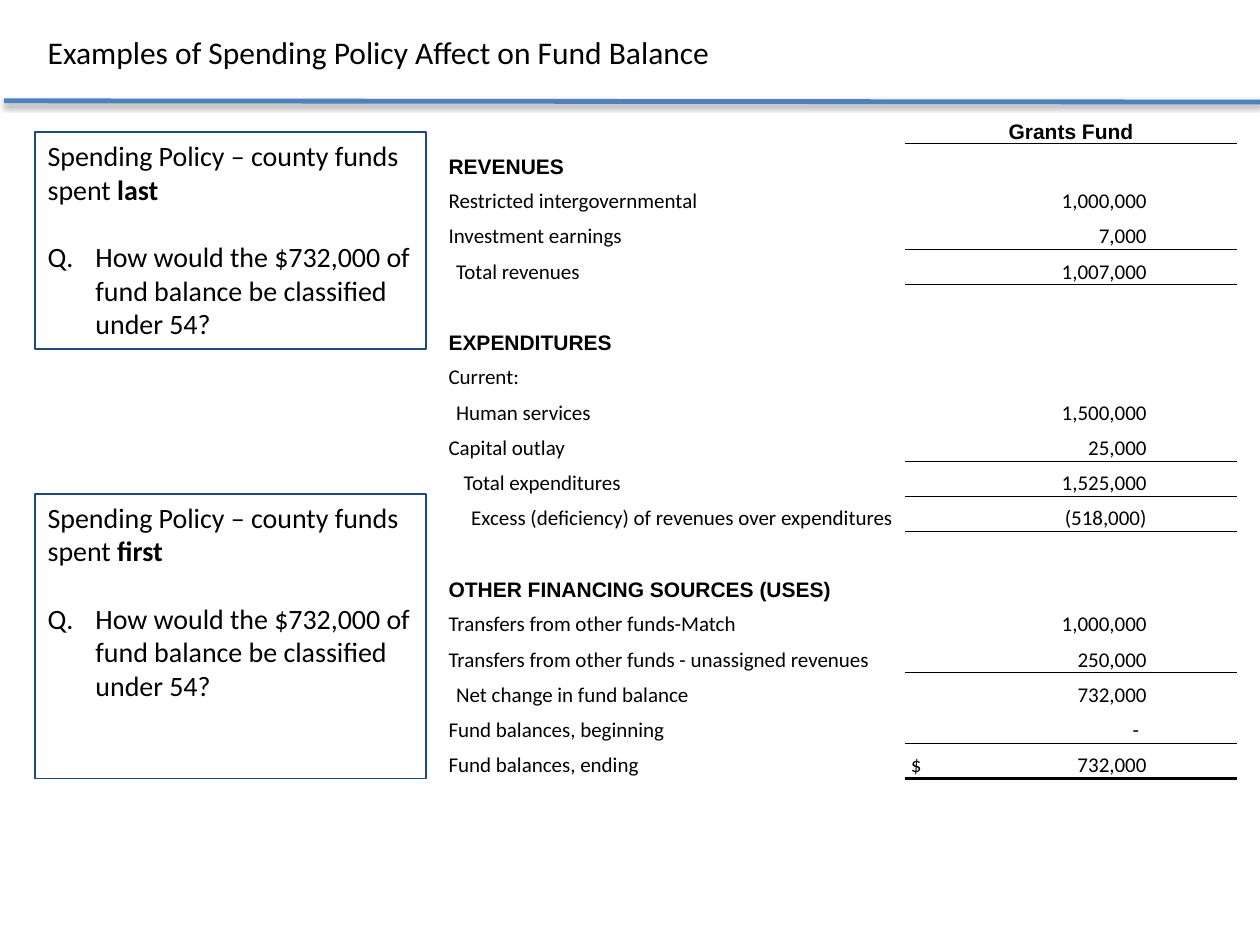
from lxml.etree import SubElement
from pptx import Presentation
from pptx.dml.color import RGBColor
from pptx.enum.shapes import MSO_CONNECTOR, MSO_SHAPE
from pptx.enum.text import MSO_ANCHOR, PP_ALIGN
from pptx.oxml import parse_xml
from pptx.oxml.ns import nsdecls, qn
from pptx.util import Inches, Pt

COLORS = {"text": "000000", "rule": "4F81BD", "box": "1F497D"}
NO_STYLE = "{2D5ABB26-0587-4C30-8999-92F81FD0307C}"
QUESTION = "How would the $732,000 of fund balance be classified under 54?"

# label, indent level, amount, width of the line below the amount
ROWS = [
    ("", 0, "Grants Fund", 0.5),
    ("REVENUES", 0, "", 0),
    ("Restricted intergovernmental", 0, "1,000,000", 0),
    ("Investment earnings", 0, "7,000", 0.5),
    ("Total revenues", 1, "1,007,000", 0.5),
    ("", 0, "", 0),
    ("EXPENDITURES", 0, "", 0),
    ("Current:", 0, "", 0),
    ("Human services", 1, "1,500,000", 0),
    ("Capital outlay", 0, "25,000", 0.5),
    ("Total expenditures", 2, "1,525,000", 0.5),
    ("Excess (deficiency) of revenues over expenditures", 3, "(518,000)", 0.5),
    ("", 0, "", 0),
    ("OTHER FINANCING SOURCES (USES)", 0, "", 0),
    ("Transfers from other funds-Match", 0, "1,000,000", 0),
    ("Transfers from other funds - unassigned revenues", 0, "250,000", 0.5),
    ("Net change in fund balance", 1, "732,000", 0),
    ("Fund balances, beginning", 0, "-", 0.5),
    ("Fund balances, ending", 0, "$\t732,000", 2),
]


def rgb(name):
    return RGBColor.from_string(COLORS[name])


def add_run(p, text, size=12, font="Calibri", bold=False):
    r = p.add_run()
    r.text = text
    r.font.size, r.font.name, r.font.bold = Pt(size), font, bold
    r.font.color.rgb = rgb("text")


class SlideBuilder:
    def __init__(self, prs):
        self.slide = prs.slides.add_slide(prs.slide_layouts[6])
        self.shapes = self.slide.shapes

    def rule(self, x1, y1, x2, y2):
        line = self.shapes.add_connector(
            MSO_CONNECTOR.STRAIGHT, Inches(x1), Inches(y1), Inches(x2), Inches(y2))
        line.line.color.rgb, line.line.width = rgb("rule"), Pt(2.75)
        line._element.spPr.append(parse_xml(
            f'<a:effectLst {nsdecls("a")}><a:outerShdw blurRad="{Pt(3.1)}" '
            f'dist="{Pt(1.6)}" dir="5400000" rotWithShape="0">'
            f'<a:srgbClr val="{COLORS["text"]}"><a:alpha val="38000"/></a:srgbClr>'
            '</a:outerShdw></a:effectLst>'))

    def title(self, text, x, y, w, h):
        tf = self.shapes.add_textbox(Inches(x), Inches(y), Inches(w), Inches(h)).text_frame
        tf.word_wrap = True
        add_run(tf.paragraphs[0], text, size=18)

    def policy_box(self, order, y, h):
        """Outlined box with a spending policy and its lettered question."""
        sp = self.shapes.add_shape(
            MSO_SHAPE.RECTANGLE, Inches(0.28), Inches(y), Inches(3.1), Inches(h))
        sp.shadow.inherit = False
        sp.fill.background()
        sp.line.color.rgb, sp.line.width = rgb("box"), Pt(1)
        tf = sp.text_frame
        tf.word_wrap, tf.vertical_anchor = True, MSO_ANCHOR.TOP
        p = tf.paragraphs[0]
        p.alignment = PP_ALIGN.LEFT
        add_run(p, "Spending Policy – county funds spent ", size=16)
        add_run(p, order, size=16, bold=True)
        p = tf.add_paragraph()
        p.alignment, p.space_before = PP_ALIGN.LEFT, Pt(19.5)
        pPr = p._p.get_or_add_pPr()
        pPr.set("marL", str(Inches(0.38)))
        pPr.set("indent", str(-Inches(0.38)))
        SubElement(pPr, qn("a:buFont"), typeface="+mj-lt")
        SubElement(pPr, qn("a:buAutoNum"), type="alphaUcPeriod", startAt="17")
        add_run(p, QUESTION, size=16)

    def cell(self, cell, text, left=0.01, right=0.01, align=PP_ALIGN.LEFT,
             tab=None, border=0, **fmt):
        cell.margin_left, cell.margin_right = Inches(left), Inches(right)
        cell.margin_top, cell.margin_bottom = Inches(0.01), 0
        cell.vertical_anchor = MSO_ANCHOR.BOTTOM
        if border:
            ln = SubElement(cell._tc.get_or_add_tcPr(), qn("a:lnB"), w=str(Pt(border)))
            fill = SubElement(ln, qn("a:solidFill"))
            SubElement(fill, qn("a:srgbClr"), val=COLORS["text"])
        cell.fill.background()
        p = cell.text_frame.paragraphs[0]
        p.alignment = align
        if tab:
            tabs = SubElement(p._p.get_or_add_pPr(), qn("a:tabLst"))
            SubElement(tabs, qn("a:tab"), pos=str(Inches(tab)), algn="r")
        if text:
            add_run(p, text, **fmt)
        else:
            SubElement(p._p, qn("a:endParaRPr"), sz="1200")

    def statement(self, rows, x, y, widths, row_h):
        frame = self.shapes.add_table(
            len(rows), len(widths), Inches(x), Inches(y),
            Inches(sum(widths)), Inches(row_h * len(rows)))
        table = frame.table
        table.first_row = table.horz_banding = False
        table._tbl.tblPr.find(qn("a:tableStyleId")).text = NO_STYLE
        for col, width in zip(table.columns, widths):
            col.width = Inches(width)
        heading = dict(font="Arial", bold=True)
        for i, (label, level, amount, border) in enumerate(rows):
            table.rows[i].height = Inches(row_h)
            fmt = heading if label.isupper() else {}
            self.cell(table.cell(i, 0), label, left=0.01 + 0.06 * level, **fmt)
            if i == 0:
                fmt = dict(heading, align=PP_ALIGN.CENTER)
            elif "\t" in amount:
                fmt = dict(left=0.05, tab=1.87)
            else:
                fmt = dict(right=0.78 if amount == "-" else 0.72, align=PP_ALIGN.RIGHT)
            self.cell(table.cell(i, 1), amount, border=border, **fmt)
            if label.startswith("OTHER"):
                table.cell(i, 0).merge(table.cell(i, 1))


def main():
    prs = Presentation()
    prs.slide_width, prs.slide_height = Inches(10), Inches(7.5)
    s = SlideBuilder(prs)
    s.rule(0.03, 0.8, 10, 0.81)
    s.statement(ROWS, 3.55, 0.86, (3.63, 2.64), 0.28)
    s.policy_box("last", 1.05, 1.72)
    s.policy_box("first", 3.92, 2.26)
    s.title("Examples of Spending Policy Affect on Fund Balance", 0.28, 0.21, 7.38, 0.4)
    prs.save("out.pptx")


if __name__ == "__main__":
    main()
